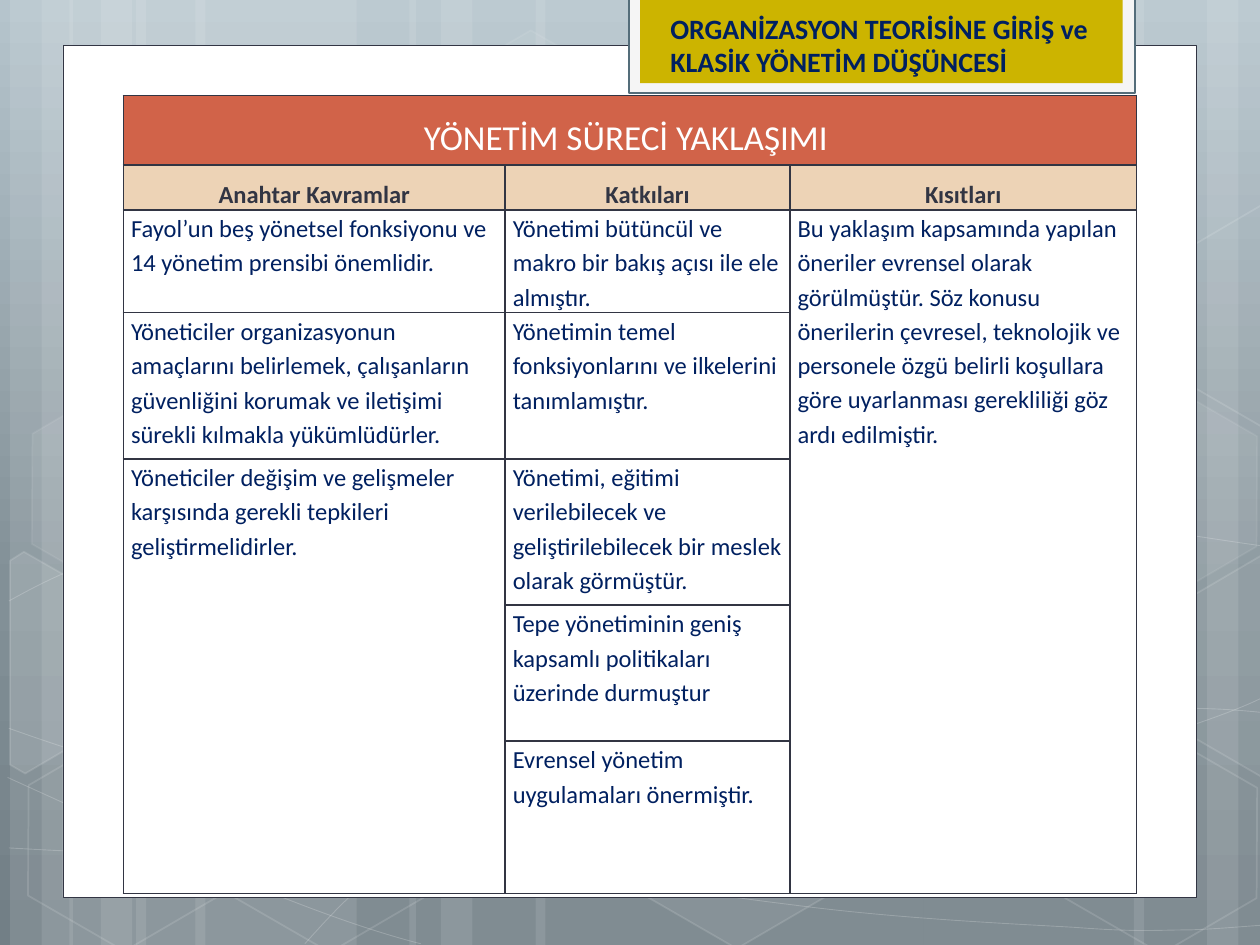
from copy import deepcopy
from lxml import etree
from pptx import Presentation, oxml
from pptx import util as u
from pptx.dml.color import RGBColor
from pptx.enum import shapes, text
from pptx.oxml.ns import nsdecls, qn

theme = {
    "sky": [(0, "B5C4CC"), (0.62, "829097"), (1, "727F86")],
    "white": "FFFFFF", "pale": "F5F5F5", "slate": "546D7A", "gold": "CCB400",
    "navy": "002060", "ink": "323543", "brick": "D16349", "sand": "EDD3B6",
    "font": "Calibri", "head": 20, "title": 16, "body": 14,
}
white, ink, navy = theme["white"], theme["ink"], theme["navy"]

deck = Presentation()
deck.slide_width, deck.slide_height = u.Inches(10), u.Inches(7.5)
unit = deck.slide_width // 10  # grid of 10 columns by 7.5 rows
fine = 100  # freeform points are whole hundredths of a column
slide = deck.slides.add_slide(deck.slide_layouts[5])
parts = slide.shapes


def paint(shape, fill=None, clear=100, line=None, width=1, faint=100):
    """Fill and outline a shape; clear and faint are opacities in percent."""
    shape.shadow.inherit = False
    for form, tone, share, place in ((shape.fill, fill, clear, ""),
                                     (shape.line.fill, line, faint, "a:ln/")):
        if tone is None:
            form.background()
            continue
        form.solid()
        form.fore_color.rgb = RGBColor.from_string(tone)
        if share < 100:
            mark = shape.element.xpath(f"./p:spPr/{place}a:solidFill/a:srgbClr")[0]
            etree.SubElement(mark, qn("a:alpha")).set("val", str(share * 1000))
    if line:
        shape.line.width = u.Pt(width)


def write(para, words, size, tone, bold=False, align="LEFT", gap=1.0):
    run = para.add_run()
    run.text = words
    look = {"name": theme["font"], "size": u.Pt(size), "bold": bold}
    for key, value in look.items():
        setattr(run.font, key, value)
    run.font.color.rgb = RGBColor.from_string(tone)
    para.alignment = getattr(text.PP_ALIGN, align)
    para.line_spacing = gap


# Background gradient, top to bottom
sky = slide.background.fill
sky.gradient()
sky.gradient_angle = 270
stops = slide.element.xpath(".//p:bg//a:gsLst")[0]
stops.append(deepcopy(stops[-1]))
for stop, (place, tone) in zip(sky.gradient_stops, theme["sky"]):
    stop.position = place
    stop.color.rgb = RGBColor.from_string(tone)

# Translucent vertical bars: left, width
bars = [(1.08, 1.75), (0.08, 0.5), (0.33, 0.83), (1.55, 1.75), (0.55, 0.5),
        (0.8, 0.83), (7.33, 1.75), (9.58, 0.5), (9, 0.83), (4.25, 3.08),
        (3.25, 0.5), (3.5, 0.83)]
for left, wide in bars:
    bar = parts.add_shape(shapes.MSO_SHAPE.RECTANGLE, int(left * unit), 0,
                          int(wide * unit), deck.slide_height)
    paint(bar, white, 10)

# Flowing lines: a start point, then two controls and an end per curve
waves = [
    [(0.07, 6.73), (0.61, 6.76), (1.15, 6.79), (1.9, 6.78), (2.65, 6.77),
     (3.58, 6.75), (4.58, 6.65), (5.58, 6.55), (7, 6.36), (7.92, 6.17),
     (8.83, 5.98), (9.77, 5.68), (10.07, 5.51)],
    [(0.07, 4.77), (0.36, 4.61), (0.65, 4.46), (1.21, 4.31), (1.78, 4.16),
     (2.59, 3.94), (3.47, 3.87), (4.36, 3.8), (5.44, 3.79), (6.54, 3.87),
     (7.64, 3.95), (9.47, 4.26), (10.07, 4.34)],
    [(0.06, 6.17), (1.27, 6.72), (2.47, 7.27), (3.34, 7.49)],
    [(0.07, 5.78), (0.38, 5.89), (0.7, 6), (1.28, 6.16), (1.86, 6.31),
     (2.73, 6.56), (3.57, 6.73), (4.4, 6.9), (5.45, 7.08), (6.28, 7.18),
     (7.11, 7.29), (8, 7.33), (8.53, 7.36), (9.05, 7.4), (9.19, 7.38),
     (9.45, 7.38), (9.71, 7.37), (9.89, 7.35), (10.07, 7.34)],
    [(2.42, 7.49), (2.6, 7.29), (2.78, 7.09), (3.02, 6.91), (3.26, 6.73),
     (3.6, 6.53), (3.88, 6.39), (4.16, 6.25), (4.33, 6.19), (4.7, 6.09),
     (5.06, 5.99), (5.73, 5.85), (6.08, 5.78), (6.44, 5.71), (6.49, 5.71),
     (6.8, 5.69), (7.11, 5.66), (7.6, 5.63), (7.94, 5.62), (8.29, 5.61),
     (8.86, 5.62), (8.86, 5.62), (9.08, 5.62), (9.3, 5.62), (9.53, 5.62),
     (9.71, 5.63), (9.88, 5.64), (9.97, 5.65), (10.06, 5.66), (10.03, 5.65),
     (10.06, 5.66)],
]
waves[-1].pop(21)  # the curve meets its straight stretch in one point
for wave in waves:
    dots = [(round(x * fine), round(y * fine)) for x, y in wave]
    pen = parts.build_freeform(*dots[0], scale=unit / fine)
    pen.add_line_segments(dots[1:], close=False)
    curve = pen.convert_to_shape()
    legs = curve.element.xpath(".//a:lnTo")
    for i in range(0, len(legs) - 2, 3):
        bend = etree.Element(qn("a:cubicBezTo"))
        legs[i].addprevious(bend)
        for leg in legs[i:i + 3]:
            bend.append(leg[0])
            leg.getparent().remove(leg)
    paint(curve, line=white, width=0.5, faint=20)

# Whole hexagons: left, top, fill opacity, line opacity
cells = [(3.34, 0.36, 4, 8), (4.97, 5.89, 6, 12), (0.11, 5.91, 0, 12),
         (0.14, 3.12, 7, 8), (1.74, 5.92, 0, 12), (7.53, 4.53, 10, 12),
         (8.34, 5.93, 0, 12), (8.34, 3.14, 7, 8)]
for left, top, clear, faint in cells:
    hexa = parts.add_shape(shapes.MSO_SHAPE.HEXAGON, int(left * unit),
                           int(top * unit), int(1.75 * unit), int(1.52 * unit))
    hexa.adjustments[0], hexa.adjustments[1] = 0.285, 1.155
    hexa.rotation = 30
    paint(hexa, white if clear else None, clear, white, 1, faint)

# Hexagons cut by the slide edge: fill opacity, corners
cuts = [
    (10, [(0.08, 4.45), (0.19, 4.38), (0.96, 4.82), (0.95, 5.7), (0.2, 6.14),
          (0.08, 6.07)]),
    (4, [(9.26, 4.85), (10.01, 4.41), (10.09, 4.46), (10.09, 6.13),
         (10.02, 6.17), (9.26, 5.73)]),
    (0, [(9.26, 2.07), (10.01, 1.63), (10.1, 1.68), (10.09, 3.35),
         (10.02, 3.39), (9.26, 2.95)]),
]
for clear, ends in cuts:
    dots = [(round(x * fine), round(y * fine)) for x, y in ends]
    pen = parts.build_freeform(*dots[0], scale=unit / fine)
    pen.add_line_segments(dots[1:], close=True)
    paint(pen.convert_to_shape(), white if clear else None, clear, white, 1, 12)

# Page panel and title tab: box, fill, line, line width
panels = [((0.5, 0.36, 9, 6.76), white, ink, 0.5),
          ((4.99, -0.02, 4.02, 0.76), theme["pale"], theme["slate"], 1.25),
          ((5.08, -0.02, 3.83, 0.68), theme["gold"], None, 0)]
for box, fill, line, width in panels:
    panel = parts.add_shape(shapes.MSO_SHAPE.RECTANGLE, *(int(v * unit) for v in box))
    paint(panel, fill, line=line, width=width)

# Title, brought in front of the tab
title = parts.title
for key, value in {"left": 5.22, "top": 0.04, "width": 3.8, "height": 1.14}.items():
    setattr(title, key, int(value * unit))
frame = title.text_frame
for key, value in {"word_wrap": True, "auto_size": text.MSO_AUTO_SIZE.NONE,
                   "vertical_anchor": text.MSO_ANCHOR.TOP}.items():
    setattr(frame, key, value)
write(frame.paragraphs[0], "ORGANİZASYON TEORİSİNE GİRİŞ ve KLASİK YÖNETİM DÜŞÜNCESİ",
      theme["title"], navy, True)
parts.element.append(title.element)

# Table
cols = [3.03, 2.26, 2.75]
rows = [0.55, 0.3, 0.76, 1.16, 1.16, 1.08, 1.21]
words = [
    ["YÖNETİM SÜRECİ YAKLAŞIMI ", "", ""],
    ["Anahtar Kavramlar", "Katkıları", "Kısıtları"],
    ["Fayol’un beş yönetsel fonksiyonu ve 14 yönetim prensibi önemlidir.",
     "Yönetimi bütüncül ve makro bir bakış açısı ile ele almıştır.",
     "Bu yaklaşım kapsamında yapılan öneriler evrensel olarak görülmüştür. Söz konusu "
     "önerilerin çevresel, teknolojik ve personele özgü belirli koşullara göre "
     "uyarlanması gerekliliği göz ardı edilmiştir."],
    ["Yöneticiler organizasyonun amaçlarını belirlemek, çalışanların güvenliğini "
     "korumak ve iletişimi sürekli kılmakla yükümlüdürler.",
     "Yönetimin temel fonksiyonlarını ve ilkelerini tanımlamıştır.", ""],
    ["Yöneticiler değişim ve gelişmeler karşısında gerekli tepkileri geliştirmelidirler.",
     "Yönetimi, eğitimi verilebilecek ve geliştirilebilecek bir meslek olarak görmüştür.", ""],
    ["", "Tepe yönetiminin geniş kapsamlı politikaları üzerinde durmuştur", ""],
    ["", "Evrensel yönetim uygulamaları önermiştir.", ""],
]
heads = [(theme["brick"], (theme["head"], white, False, "CENTER", 1.5)),
         (theme["sand"], (theme["body"], ink, True, "CENTER", 1.5))]
plain = (white, (theme["body"], navy, False, "LEFT", 1.15))
holder = parts.add_table(len(rows), len(cols), int(0.98 * unit), int(0.76 * unit),
                         int(sum(cols) * unit), int(6.3 * unit))
grid = holder.table
grid.first_row = grid.horz_banding = False
for col, wide in zip(grid.columns, cols):
    col.width = int(wide * unit)
for r, (line, high) in enumerate(zip(words, rows)):
    grid.rows[r].height = int(high * unit)
    fill, look = heads[r] if r < len(heads) else plain
    for c, phrase in enumerate(line):
        cell = grid.cell(r, c)
        for side, pad in {"left": 0.06, "right": 0.06, "top": 0, "bottom": 0}.items():
            setattr(cell, "margin_" + side, int(pad * unit))
        cell.fill.solid()
        cell.fill.fore_color.rgb = RGBColor.from_string(fill)
        if phrase:
            write(cell.text_frame.paragraphs[0], phrase, *look)
for first, last in [((0, 0), (0, 2)), ((2, 2), (6, 2)), ((4, 0), (6, 0))]:
    grid.cell(*first).merge(grid.cell(*last))
holder.height = int(6.3 * unit)

# Cell borders
for props in holder.element.xpath(".//a:tcPr"):
    for i, side in enumerate("LRTB"):
        props.insert(i, oxml.parse_xml(
            f'<a:ln{side} {nsdecls("a")} w="12700"><a:solidFill>'
            f'<a:srgbClr val="{ink}"/></a:solidFill></a:ln{side}>'))

deck.save("out.pptx")
